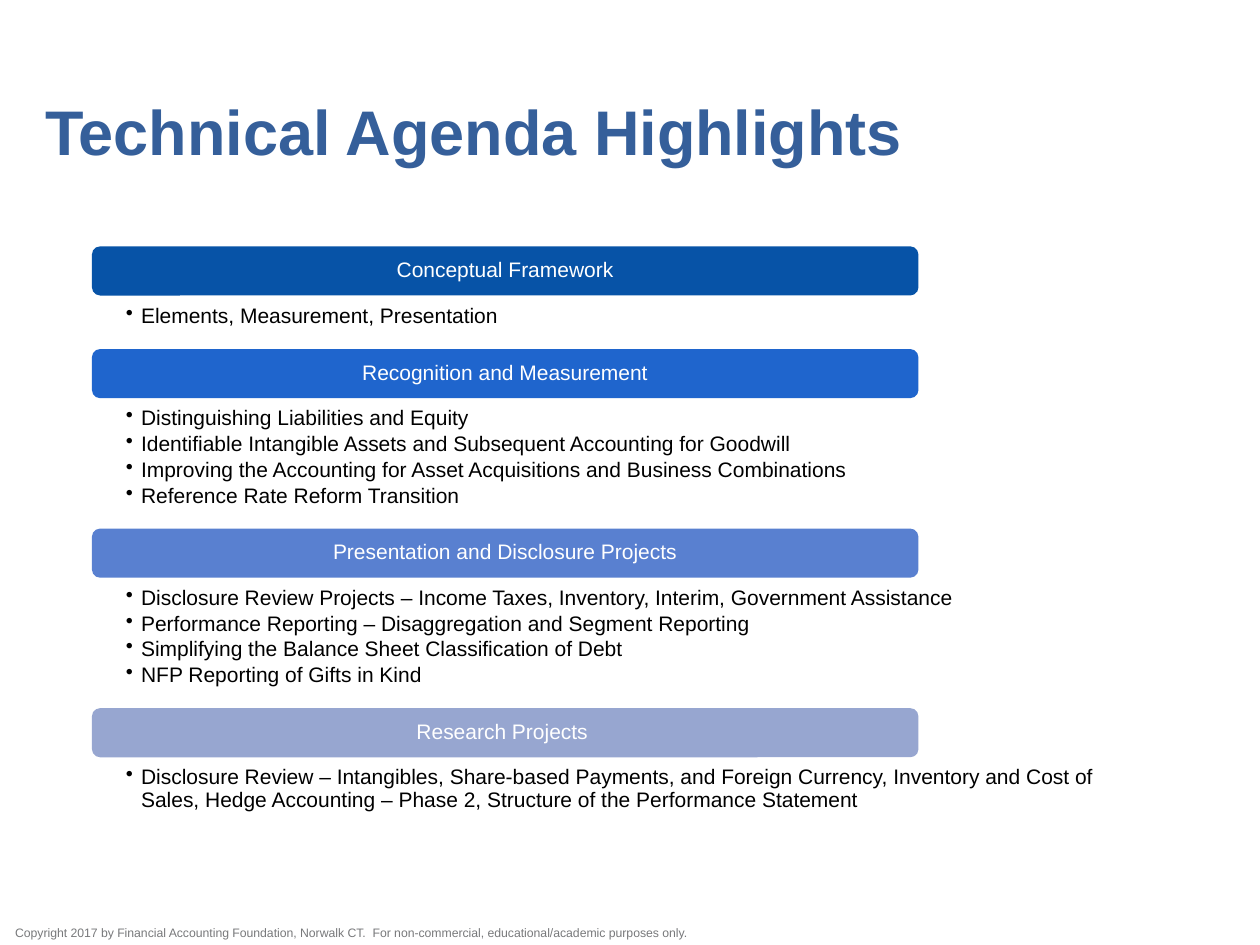
from dataclasses import dataclass

from lxml import etree
from pptx import Presentation
from pptx import util as u
from pptx.dml.color import RGBColor
from pptx.enum import shapes, text
from pptx.oxml import ns

# Grid of 100 columns by 75 rows; a cell is a tenth of an inch
CELL = u.Inches(0.1)
GAP = 2.65      # rows between the bodies of two sections
OVERLAP = 1.95  # rows by which a heading rises above its body


@dataclass
class Area:
    col: float
    row: float
    cols: float
    rows: float

    def emu(self) -> list[int]:
        return [round(n * CELL) for n in (self.col, self.row, self.cols, self.rows)]


@dataclass
class Section:
    heading: str
    color: str
    rows: float
    projects: list[str]


SECTIONS = [
    Section("Conceptual Framework", "0753A7", 5.5,
            ["Elements, Measurement, Presentation"]),
    Section("Recognition and Measurement", "1F65CD", 11.6, [
        "Distinguishing Liabilities and Equity",
        "Identifiable Intangible Assets and Subsequent Accounting for Goodwill",
        "Improving the Accounting for Asset Acquisitions and Business Combinations",
        "Reference Rate Reform Transition",
    ]),
    Section("Presentation and Disclosure Projects", "5980D0", 11.6, [
        "Disclosure Review Projects – Income Taxes, Inventory, Interim, Government Assistance",
        "Performance Reporting – Disaggregation and Segment Reporting",
        "Simplifying the Balance Sheet Classification of Debt",
        "NFP Reporting of Gifts in Kind",
    ]),
    Section("Research Projects ", "97A6D0", 7.2, [
        "Disclosure Review – Intangibles, Share-based Payments, and Foreign Currency, "
        "Inventory and Cost of Sales, Hedge Accounting – Phase 2, "
        "Structure of the Performance Statement",
    ]),
]


def rgb(value: str) -> RGBColor:
    return RGBColor.from_string(value)


def style(paragraph, size: float, color: str, bold: bool = False) -> None:
    font = paragraph.font
    font.name, font.size, font.bold = "Arial", u.Pt(size), bold
    font.color.rgb = rgb(color)


def set_frame(frame, insets: tuple, anchor) -> None:
    frame.word_wrap = True
    frame.vertical_anchor = anchor
    (frame.margin_left, frame.margin_top,
     frame.margin_right, frame.margin_bottom) = [u.Inches(n) for n in insets]


def add_panel(slide, preset, area: Area, color: str):
    panel = slide.shapes.add_shape(preset, *area.emu())
    panel.shadow.inherit = False
    panel.fill.solid()
    panel.fill.fore_color.rgb = rgb(color)
    panel.line.fill.background()
    return panel


def add_label(slide, area: Area, words: str, insets: tuple, anchor):
    frame = slide.shapes.add_textbox(*area.emu()).text_frame
    set_frame(frame, insets, anchor)
    frame.text = words
    return frame.paragraphs[0]


def add_bullet(paragraph) -> None:
    properties = paragraph._p.get_or_add_pPr()
    indent = u.Inches(0.12)
    properties.set("marL", str(indent))
    properties.set("indent", str(-indent))
    etree.SubElement(properties, ns.qn("a:buChar")).set("char", "•")


def add_section(slide, section: Section, row: float) -> None:
    # Nearly opaque body with the list of projects
    body = add_panel(slide, shapes.MSO_SHAPE.RECTANGLE,
                     Area(2.7, row, 93.6, section.rows), "FFFFFF")
    white = body.fill._xPr.find(".//" + ns.qn("a:srgbClr"))
    etree.SubElement(white, ns.qn("a:alpha")).set("val", "90000")
    frame = body.text_frame
    set_frame(frame, (0.73, 0.27, 0.73, 0.09), text.MSO_ANCHOR.TOP)
    for index, project in enumerate(section.projects):
        item = frame.add_paragraph() if index else frame.paragraphs[0]
        item.text = project
        item.level = 1
        item.alignment = text.PP_ALIGN.LEFT
        item.line_spacing = 0.9
        item.space_after = u.Pt(1.8)
        add_bullet(item)
        style(item, 12, "000000")

    # Coloured heading bar over the top of the body
    bar = add_panel(slide, shapes.MSO_SHAPE.ROUNDED_RECTANGLE,
                    Area(7.3, row - OVERLAP, 65.6, 3.9), section.color)
    set_frame(bar.text_frame, (0.27, 0.02, 0.27, 0.02), text.MSO_ANCHOR.MIDDLE)
    heading = bar.text_frame.paragraphs[0]
    heading.text = section.heading
    heading.alignment = text.PP_ALIGN.CENTER
    heading.line_spacing = 0.9
    style(heading, 12, "FFFFFF")


def main() -> None:
    deck = Presentation()
    deck.slide_width, deck.slide_height = 100 * CELL, 75 * CELL
    slide = deck.slides.add_slide(deck.slide_layouts[6])

    # Copyright line
    notice = add_label(
        slide, Area(1.2, 73.4, 54.3, 1.4),
        "Copyright 2017 by Financial Accounting Foundation, Norwalk CT.  "
        "For non-commercial, educational/academic purposes only.",
        (0, 0, 0, 0), text.MSO_ANCHOR.TOP)
    style(notice, 7, "78797B")

    # Agenda sections, stacked with equal gaps
    row = 21.5
    for section in SECTIONS:
        add_section(slide, section, row)
        row += section.rows + GAP

    # Title
    title = add_label(slide, Area(2.6, 5.9, 97.4, 9.8), "Technical Agenda Highlights",
                      (0.1, 0.05, 0.1, 0.05), text.MSO_ANCHOR.MIDDLE)
    title.line_spacing = u.Pt(37)
    style(title, 36, "355F9A", bold=True)

    deck.save("out.pptx")


if __name__ == "__main__":
    main()
